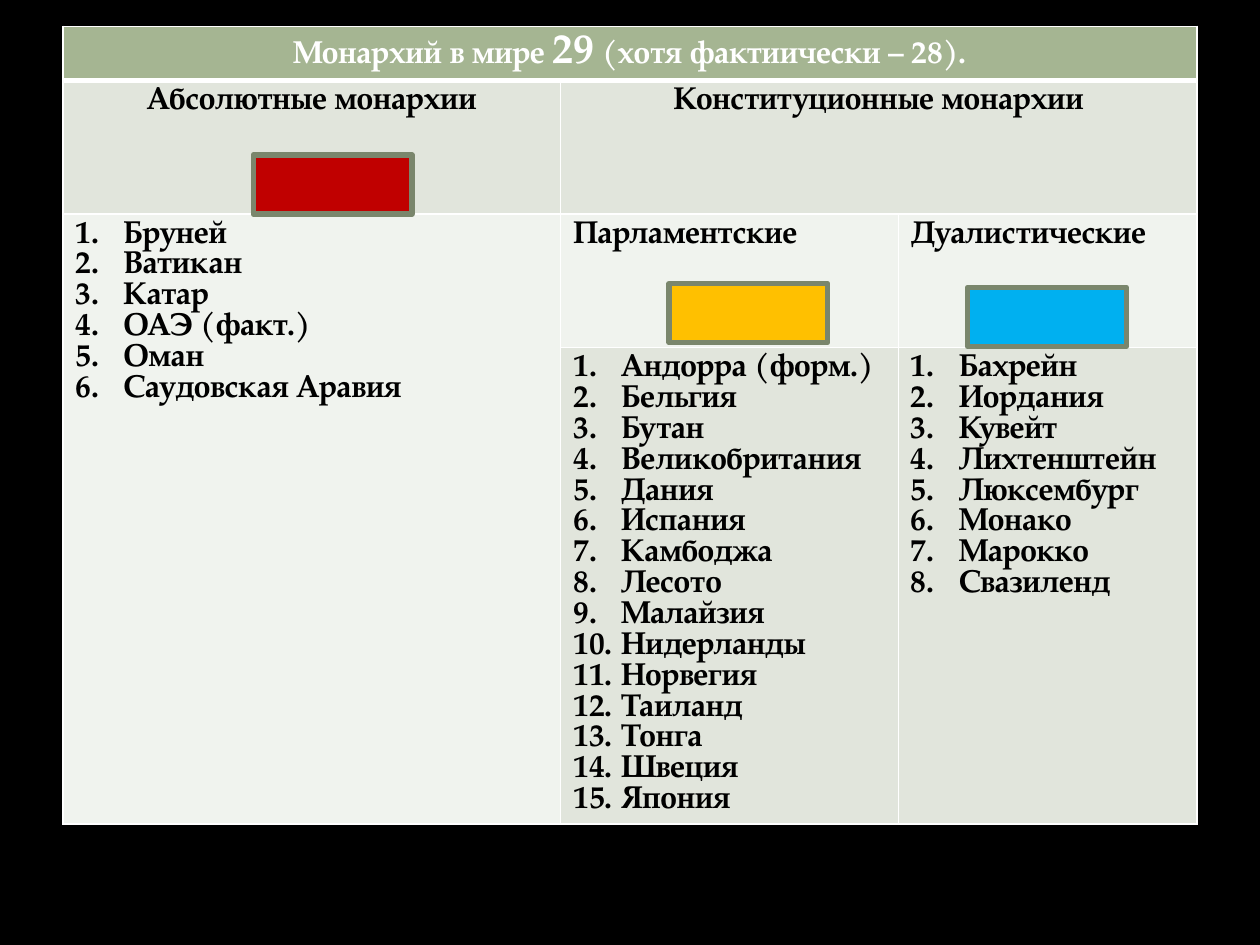
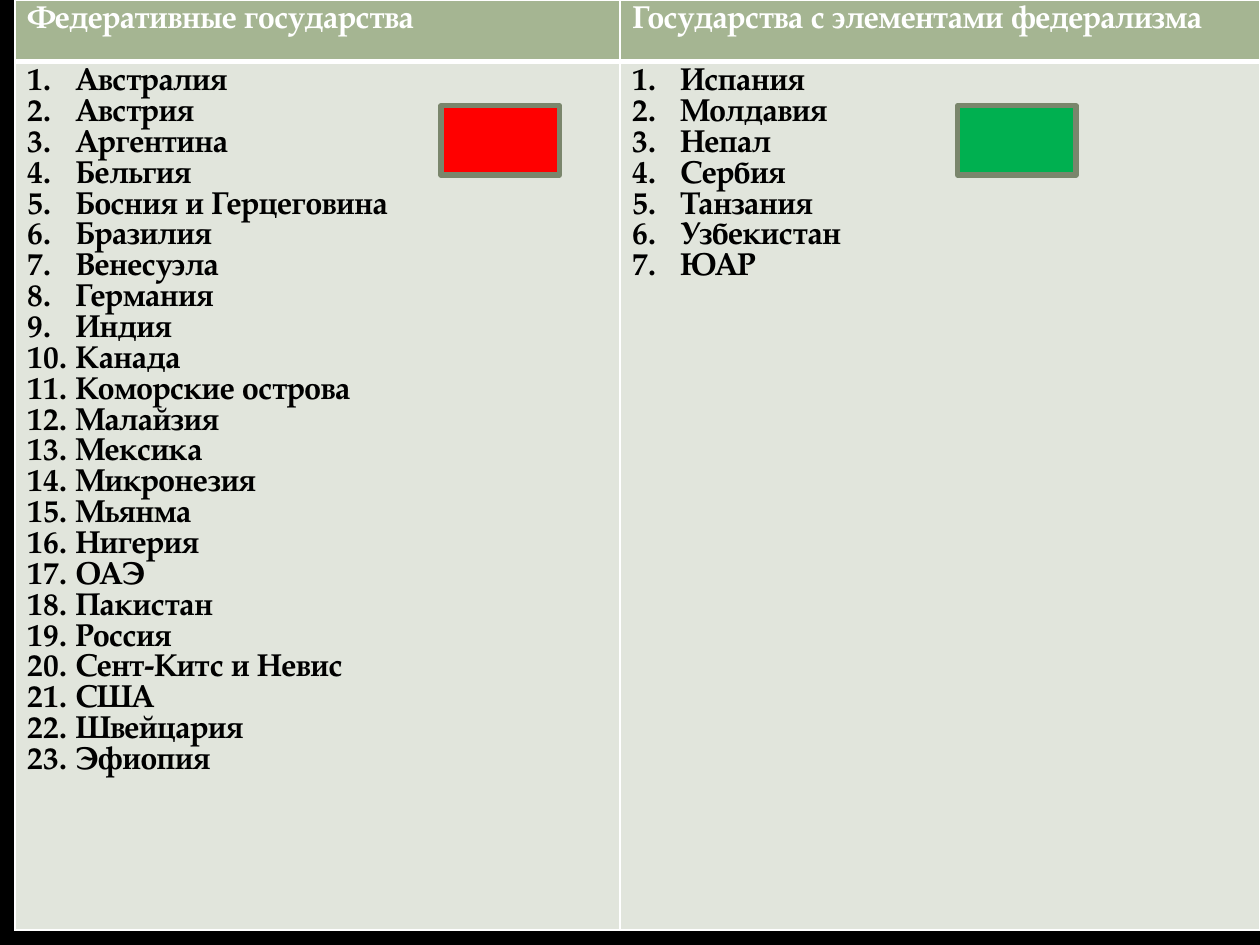
from lxml import etree
from pptx import Presentation
from pptx.dml.color import RGBColor
from pptx.enum.shapes import MSO_SHAPE
from pptx.enum.text import PP_ALIGN
from pptx.oxml.ns import qn
from pptx.util import Inches, Pt

RECTANGLE = MSO_SHAPE.RECTANGLE
LEFT, CENTER = PP_ALIGN.LEFT, PP_ALIGN.CENTER
FONT = "TeX Gyre Pagella"
TEXT_SIZE, LARGE_SIZE = 18, 24
BLACK, WHITE = "000000", "FFFFFF"
HEADER, BAND, PALE = "A5B592", "E1E5DC", "F0F3EE"
KEY_LINE = "7A866C"
LIST_INDENT = 0.38
THIN, THICK = 1, 3

ABSOLUTE = ["Бруней", "Ватикан", "Катар", "ОАЭ (факт.)", "Оман", "Саудовская Аравия"]
PARLIAMENTARY = [
    "Андорра (форм.)", "Бельгия", "Бутан", "Великобритания", "Дания",
    "Испания", "Камбоджа", "Лесото", "Малайзия", "Нидерланды",
    "Норвегия", "Таиланд", "Тонга", "Швеция", "Япония",
]
DUALISTIC = [
    "Бахрейн", "Иордания", "Кувейт", "Лихтенштейн",
    "Люксембург", "Монако", "Марокко", "Свазиленд",
]
FEDERATIONS = [
    "Австралия", "Австрия", "Аргентина", "Бельгия", "Босния и Герцеговина",
    "Бразилия", "Венесуэла", "Германия", "Индия", "Канада",
    "Коморские острова", "Малайзия", "Мексика", "Микронезия", "Мьянма",
    "Нигерия", "ОАЭ", "Пакистан", "Россия", "Сент-Китс и Невис",
    "США", "Швейцария", "Эфиопия",
]
PARTLY_FEDERAL = [
    "Испания", "Молдавия", "Непал", "Сербия", "Танзания", "Узбекистан", "ЮАР",
]


def color(value):
    return RGBColor.from_string(value)


class Slides:
    def __init__(self):
        self.deck = Presentation()
        self.deck.slide_width, self.deck.slide_height = Inches(10), Inches(7.5)
        self.page = None

    def add_page(self):
        self.page = self.deck.slides.add_slide(self.deck.slide_layouts[6])
        background = self.page.background.fill
        background.solid()
        background.fore_color.rgb = color(BLACK)

    def add_table(self, left, top, widths, heights):
        frame = self.page.shapes.add_table(
            len(heights), len(widths), Inches(left), Inches(top),
            Inches(sum(widths)), Inches(sum(heights)))
        table = frame.table
        table.first_row = table.horz_banding = False
        for column, width in zip(table.columns, widths):
            column.width = Inches(width)
        for index, (row, height) in enumerate(zip(table.rows, heights)):
            row.height = Inches(height)
            for cell in row.cells:
                self.set_borders(cell, index)
        return table

    def set_borders(self, cell, row):
        properties = cell._tc.get_or_add_tcPr()
        weights = {
            "a:lnL": THIN,
            "a:lnR": THIN,
            "a:lnT": THICK if row == 1 else THIN,
            "a:lnB": THICK if row == 0 else THIN,
        }
        for side, weight in weights.items():
            line = etree.SubElement(properties, qn(side), w=str(Pt(weight)))
            fill = etree.SubElement(line, qn("a:solidFill"))
            etree.SubElement(fill, qn("a:srgbClr"), val=WHITE)

    def fill_cell(self, cell, fill, lines, align=LEFT, numbered=False):
        cell.fill.solid()
        cell.fill.fore_color.rgb = color(fill)
        cell.text_frame.text = "\n".join(lines)
        for para in cell.text_frame.paragraphs:
            para.alignment = align
            if numbered:
                self.number(para)
            for span in para.runs:
                self.style_span(span, WHITE if fill == HEADER else BLACK)

    def number(self, para):
        properties = para._p.get_or_add_pPr()
        properties.set("marL", str(Inches(LIST_INDENT)))
        properties.set("indent", str(-Inches(LIST_INDENT)))
        etree.SubElement(properties, qn("a:buAutoNum"), type="arabicPeriod")

    def style_span(self, span, text_color, size=TEXT_SIZE):
        span.font.name = FONT
        span.font.size = Pt(size)
        span.font.bold = True
        span.font.color.rgb = color(text_color)

    def add_span(self, cell, text, size=TEXT_SIZE):
        span = cell.text_frame.paragraphs[0].add_run()
        span.text = text
        self.style_span(span, WHITE, size)

    def add_key(self, left, top, width, height, fill):
        box = self.page.shapes.add_shape(
            RECTANGLE, Inches(left), Inches(top), Inches(width), Inches(height))
        box.shadow.inherit = False
        box.fill.solid()
        box.fill.fore_color.rgb = color(fill)
        box.line.color.rgb = color(KEY_LINE)
        box.line.width = Pt(3)


def add_monarchies(slides):
    slides.add_page()
    table = slides.add_table(0.5, 0.21, [3.95, 2.68, 2.37], [0.43, 1.06, 1.06, 3.78])
    for first, last in [((0, 0), (0, 2)), ((1, 1), (1, 2)), ((2, 0), (3, 0))]:
        table.cell(*first).merge(table.cell(*last))

    title = table.cell(0, 0)
    slides.fill_cell(title, HEADER, ["Монархий в мире "], CENTER)
    slides.add_span(title, "29", LARGE_SIZE)
    slides.add_span(title, " (хотя фактиически – 28).")

    for column, heading in enumerate(["Абсолютные монархии", "Конституционные монархии"]):
        slides.fill_cell(table.cell(1, column), BAND, [heading], CENTER)
    for column, heading in enumerate(["Парламентские", "Дуалистические"], 1):
        slides.fill_cell(table.cell(2, column), PALE, [heading])

    slides.fill_cell(table.cell(2, 0), PALE, ABSOLUTE, numbered=True)
    for column, countries in enumerate([PARLIAMENTARY, DUALISTIC], 1):
        slides.fill_cell(table.cell(3, column), BAND, countries, numbered=True)

    for left, top, fill in [(2.01, 1.23, "C00000"), (5.31, 2.25, "FFC000"), (7.68, 2.28, "00B0F0")]:
        slides.add_key(left, top, 1.26, 0.47, fill)


def add_federations(slides):
    slides.add_page()
    table = slides.add_table(0.12, 0, [4.8, 5.08], [0.49, 6.89])
    groups = [
        ("Федеративные государства", FEDERATIONS, 3.5, "FF0000"),
        ("Государства с элементами федерализма", PARTLY_FEDERAL, 7.6, "00B050"),
    ]
    for column, (heading, countries, key_left, key_fill) in enumerate(groups):
        slides.fill_cell(table.cell(0, column), HEADER, [heading])
        slides.fill_cell(table.cell(1, column), BAND, countries, numbered=True)
        slides.add_key(key_left, 0.84, 0.94, 0.55, key_fill)


def main():
    slides = Slides()
    add_monarchies(slides)
    add_federations(slides)
    slides.deck.save("out.pptx")


if __name__ == "__main__":
    main()
